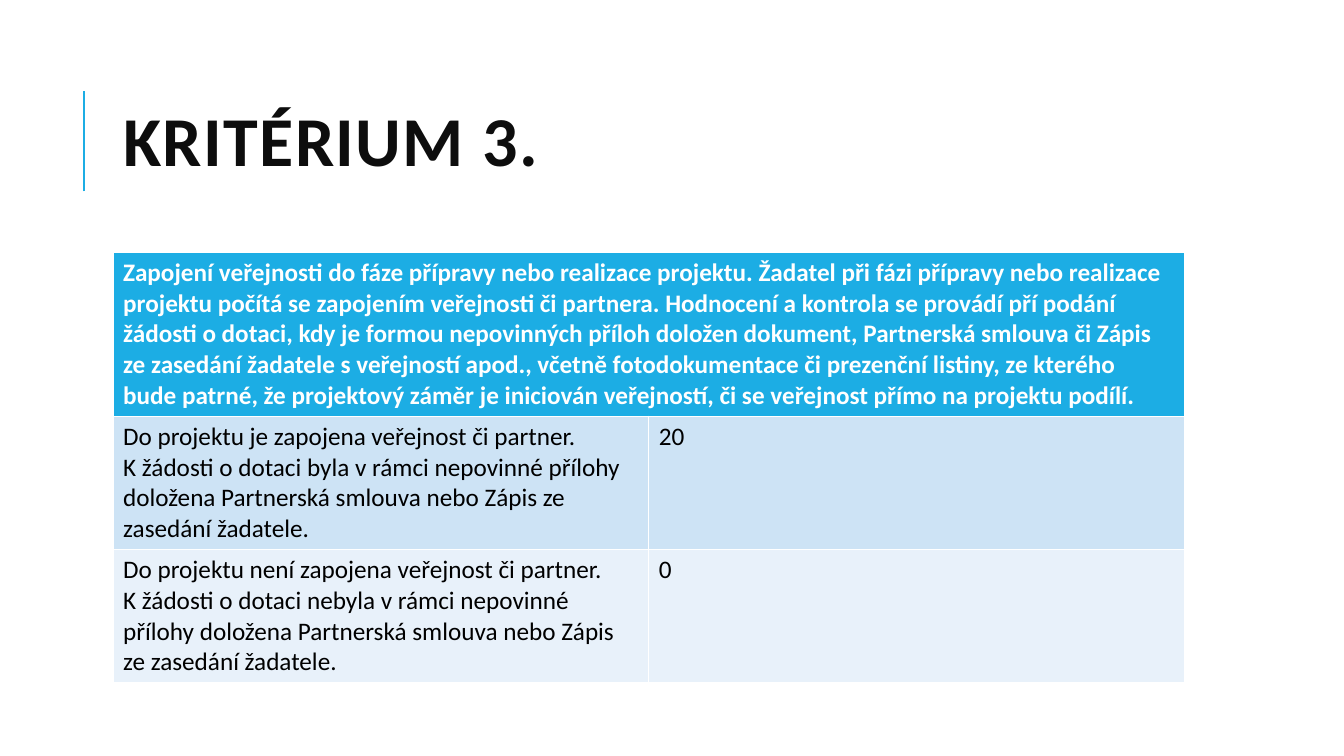
from pptx import Presentation
from pptx.dml.color import RGBColor
from pptx.enum.shapes import MSO_CONNECTOR
from pptx.enum.text import MSO_ANCHOR, MSO_AUTO_SIZE, PP_ALIGN
from pptx.oxml.ns import qn
from pptx.util import Cm, Pt
from lxml.etree import SubElement

ACCENT = RGBColor(0x1C, 0xAD, 0xE4)
TITLE_INK = RGBColor(0x0D, 0x0D, 0x0D)
BLACK = RGBColor(0, 0, 0)
WHITE = RGBColor(0xFF, 0xFF, 0xFF)
BANDS = [RGBColor(0xCD, 0xE3, 0xF5), RGBColor(0xE8, 0xF1, 0xFA)]
FONT = "Calibri"

CRITERION = (
    "Zapojení veřejnosti do fáze přípravy nebo realizace projektu. "
    "Žadatel při fázi přípravy nebo realizace projektu počítá se zapojením "
    "veřejnosti či partnera. Hodnocení a kontrola se provádí pří podání "
    "žádosti o dotaci, kdy je formou nepovinných příloh doložen dokument, "
    "Partnerská smlouva či Zápis ze zasedání žadatele s veřejností apod., "
    "včetně fotodokumentace či prezenční listiny, ze kterého bude patrné, "
    "že projektový záměr je iniciován veřejností, či se veřejnost přímo "
    "na projektu podílí."
)
SCORES = [
    ("Do projektu je zapojena veřejnost či partner.\n"
     "K žádosti o dotaci byla v rámci nepovinné přílohy doložena "
     "Partnerská smlouva nebo Zápis ze zasedání žadatele.", "20"),
    ("Do projektu není zapojena veřejnost či partner.\n"
     "K žádosti o dotaci nebyla v rámci nepovinné přílohy doložena "
     "Partnerská smlouva nebo Zápis ze zasedání žadatele.", "0"),
]


def style(p, size, color, bold):
    p.font.name = FONT
    p.font.size = Pt(size)
    p.font.bold = bold
    p.font.color.rgb = color


def add_title(slide, text, left, top, width, height):
    """Fill the title placeholder and draw the accent rule to its left."""
    rule_x = left - Cm(0.73)
    rule = slide.shapes.add_connector(
        MSO_CONNECTOR.STRAIGHT, rule_x, top + Cm(3.2), rule_x, top + Cm(0.67))
    rule.line.color.rgb = ACCENT
    rule.line.width = Pt(1.5)
    SubElement(rule._element.spPr, qn("a:effectLst"))

    title = slide.shapes.title
    title.left, title.top, title.width, title.height = left, top, width, height
    tf = title.text_frame
    tf.text = text
    tf.word_wrap = True
    tf.auto_size = MSO_AUTO_SIZE.NONE
    tf.vertical_anchor = MSO_ANCHOR.MIDDLE
    p = tf.paragraphs[0]
    p.alignment = PP_ALIGN.LEFT
    p.line_spacing = 0.8
    style(p, 50, TITLE_INK, True)
    p.runs[0]._r.get_or_add_rPr().set("spc", "100")


def fill_cell(cell, text, fill, color, bold=False):
    cell.fill.solid()
    cell.fill.fore_color.rgb = fill
    cell.text_frame.text = text
    for p in cell.text_frame.paragraphs:
        style(p, 18, color, bold)


def add_score_table(slide, left, top, width, header_height, row_height):
    height = header_height + len(SCORES) * row_height
    table = slide.shapes.add_table(
        1 + len(SCORES), 2, left, top, width, height).table
    for row in table.rows:
        row.height = row_height
    table.rows[0].height = header_height

    table.cell(0, 0).merge(table.cell(0, 1))
    fill_cell(table.cell(0, 0), CRITERION, ACCENT, WHITE, bold=True)
    for i, (score, band) in enumerate(zip(SCORES, BANDS), start=1):
        for j, text in enumerate(score):
            fill_cell(table.cell(i, j), text, band, BLACK)


def main():
    prs = Presentation()
    prs.slide_width, prs.slide_height = Cm(33.87), Cm(19.05)
    slide = prs.slides.add_slide(prs.slide_layouts[5])
    left, width = Cm(2.85), Cm(27)
    add_title(slide, "KRITÉRIUM 3.", left, Cm(1.62), width, Cm(4.16))
    add_score_table(slide, left, Cm(6.36), width, Cm(4.13), Cm(3.35))
    prs.save("out.pptx")


if __name__ == "__main__":
    main()
